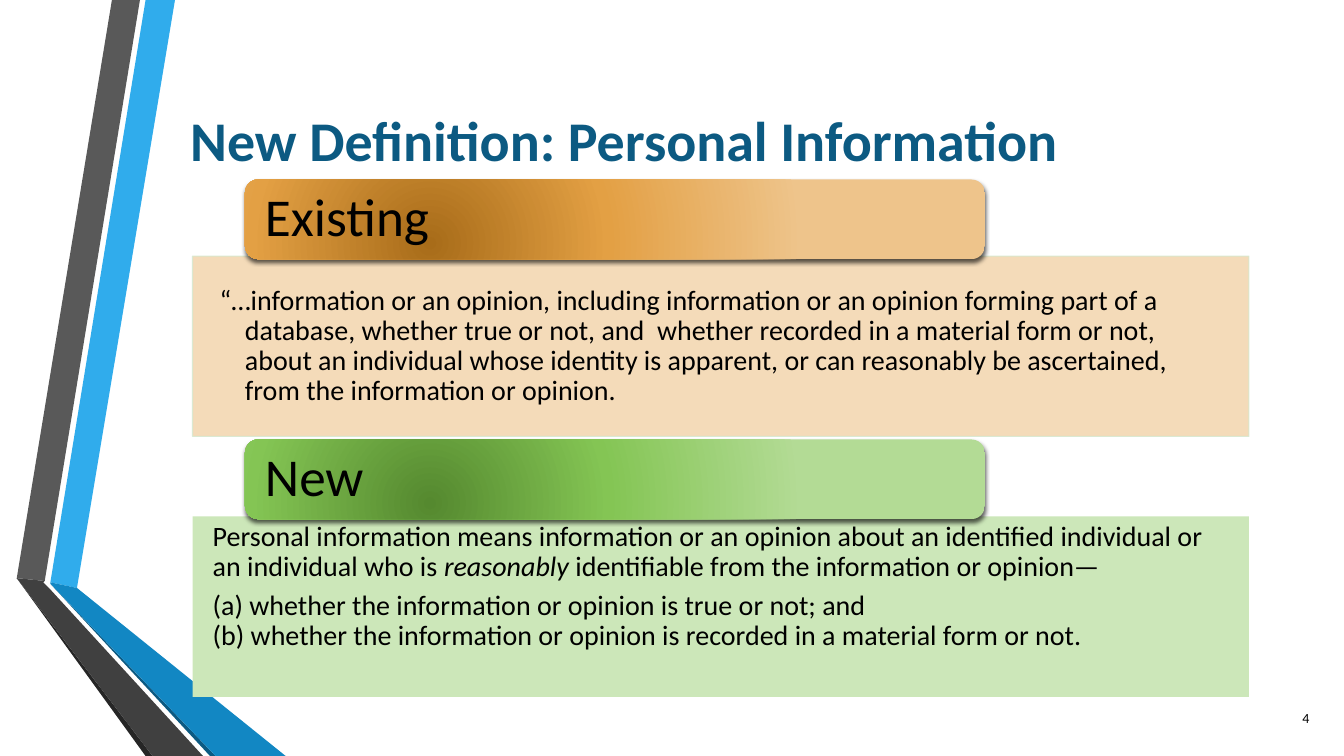
import lxml.etree
import pptx
import pptx.dml.color
import pptx.enum.shapes
import pptx.enum.text
import pptx.oxml
import pptx.oxml.ns
import pptx.util

Pt = pptx.util.Pt
SHAPE = pptx.enum.shapes.MSO_SHAPE
ALIGN = pptx.enum.text.PP_ALIGN
ANCHOR = pptx.enum.text.MSO_ANCHOR
qn = pptx.oxml.ns.qn

FONT = "Calibri"
BLACK = "000000"
TITLE_BLUE = "0C5A82"
BODY_INSETS = {"Existing": (19.4, 10), "New": (14.4, 4.3)}

RIBBONS = [
    ("30ACEC", [(36, 416.2), (55.4, 419.8), (124.6, 0), (104.4, 0)]),
    ("595959", [(100, 0), (80, 0), (11.5, 412.6), (31.7, 415.4)]),
    ("262626", [(11.5, 412.6), (104.4, 540), (108.7, 540)]),
    (TITLE_BLUE, [(36, 416.9), (149.8, 540), (154, 540)]),
    ("1287C3", [(36, 416.9), (154, 540), (203.8, 540), (55.4, 419.8), (36, 416.2)]),
    ("404040", [(145.4, 540), (34.6, 419.8), (31, 416.2), (31.7, 415.4), (11.5, 412.6), (108.7, 540)]),
]


def color(value):
    """Turn a hex string into a colour."""
    return pptx.dml.color.RGBColor.from_string(value)


def add_child(parent, tag, **attributes):
    """Append a DrawingML element and return it."""
    values = {name: str(value) for name, value in attributes.items()}
    return lxml.etree.SubElement(parent, qn(tag), values)


def set_alpha(fill, percent):
    """Make a solid fill partly transparent."""
    for rgb in fill._xPr.iter(qn("a:srgbClr")):
        add_child(rgb, "a:alpha", val=percent * 1000)


def write(p, text, size=20, fill=BLACK, bold=False, italic=False):
    """Add a formatted run to a paragraph."""
    r = p.add_run()
    r.text = text
    r.font.name = FONT
    r.font.size = Pt(size)
    r.font.bold = bold
    r.font.italic = italic
    r.font.color.rgb = color(fill)


def set_paragraph(p, align=ALIGN.LEFT, line=1.0, after=0, hanging=0):
    """Set alignment, spacing and hanging indent of a paragraph."""
    p.alignment = align
    p.line_spacing = line
    p.space_before = Pt(0)
    p.space_after = Pt(after)
    pPr = p._p.get_or_add_pPr()
    pPr.set("marL", str(Pt(hanging)))
    pPr.set("indent", str(-Pt(hanging)))
    return p


def set_frame(s, anchor, inset_x=7.2, inset_y=3.6):
    """Prepare the text frame of a shape."""
    tf = s.text_frame
    tf.word_wrap = True
    tf.vertical_anchor = anchor
    tf.margin_left = tf.margin_right = Pt(inset_x)
    tf.margin_top = tf.margin_bottom = Pt(inset_y)
    return tf


def add_ribbon(slide, fill, points):
    """Draw one filled piece of the folded ribbons."""
    builder = slide.shapes.build_freeform(*points[0], scale=Pt(1))
    builder.add_line_segments(points[1:], close=True)
    s = builder.convert_to_shape()
    s.shadow.inherit = False
    s.fill.solid()
    s.fill.fore_color.rgb = color(fill)
    s.line.fill.background()


def add_label(slide, box, text, align, **style):
    """Add a one-paragraph text box."""
    s = slide.shapes.add_textbox(*map(Pt, box))
    tf = set_frame(s, ANCHOR.MIDDLE)
    write(set_paragraph(tf.paragraphs[0], align), text, **style)


def add_panel(slide, top, fill, name, anchor):
    """Add a body rectangle and return it."""
    s = slide.shapes.add_shape(SHAPE.RECTANGLE, Pt(137.5), Pt(top), Pt(754.6), Pt(128.9))
    s.shadow.inherit = False
    s.fill.solid()
    s.fill.fore_color.rgb = color(fill)
    s.line.fill.background()
    set_frame(s, anchor, *BODY_INSETS[name])
    return s


def add_header(slide, top, text, stops):
    """Add a rounded header with a radial gradient and a soft shadow."""
    s = slide.shapes.add_shape(SHAPE.ROUNDED_RECTANGLE, Pt(175), Pt(top), Pt(528.5), Pt(56.9))
    s.line.fill.background()
    s.fill.background()
    spPr = s._element.spPr
    grad = pptx.oxml.parse_xml('<a:gradFill %s rotWithShape="1"/>' % pptx.oxml.ns.nsdecls("a"))
    stop_list = add_child(grad, "a:gsLst")
    for position, value in zip((0, 48, 100), stops):
        stop = add_child(stop_list, "a:gs", pos=position * 1000)
        add_child(stop, "a:srgbClr", val=value)
    circle = add_child(grad, "a:path", path="circle")
    add_child(circle, "a:fillToRect", l=25000, t=80000, r=75000, b=20000)
    spPr.replace(spPr.find(qn("a:noFill")), grad)

    s.shadow.inherit = False
    shadow = add_child(spPr.find(qn("a:effectLst")), "a:outerShdw", blurRad=Pt(3),
                       dist=Pt(2), dir=5400000, algn="ctr", rotWithShape=0)
    add_child(add_child(shadow, "a:srgbClr", val=BLACK), "a:alpha", val=64000)

    tf = set_frame(s, ANCHOR.MIDDLE, 11.5, 5.8)
    write(set_paragraph(tf.paragraphs[0], line=0.9), text, size=38)


def add_existing(slide):
    """Add the existing definition."""
    s = add_panel(slide, 182.9, "F3D8B2", "Existing", ANCHOR.MIDDLE)
    set_alpha(s.fill, 90)
    s.line.color.rgb = color("D8E9D0")
    s.line.width = Pt(0.75)
    set_alpha(s.line.fill, 90)
    p = set_paragraph(s.text_frame.paragraphs[0], line=0.9, after=3, hanging=18)
    write(p, "“…information or an opinion, including information or an opinion forming part of a "
             "database, whether true or not, and  whether recorded in a material form or not, "
             "about an individual whose identity is apparent, or can reasonably be ascertained, "
             "from the information or opinion.")
    add_header(slide, 128.2, "Existing", ("A86C19", "E3A044", "EEC48B"))


def add_new(slide):
    """Add the new definition."""
    tf = add_panel(slide, 368.9, "CCE7B9", "New", ANCHOR.TOP).text_frame
    p = set_paragraph(tf.paragraphs[0], line=0.9, after=3)
    write(p, "Personal information means information or an opinion about an identified "
             "individual or an individual who is ")
    write(p, "reasonably ", italic=True)
    write(p, "identifiable from the information or opinion—")
    p = set_paragraph(tf.add_paragraph())
    write(p, "(a) whether the information or opinion is true or not; and")
    p = set_paragraph(tf.add_paragraph(), line=0.9, after=3, hanging=27)
    write(p, "(b) whether the information or opinion is recorded in a material form or not.")
    add_header(slide, 313.9, "New", ("55892F", "84C554", "B3DB95"))


def main():
    """Build and save the slide."""
    prs = pptx.Presentation()
    prs.slide_width, prs.slide_height = Pt(960), Pt(540)
    slide = prs.slides.add_slide(prs.slide_layouts[6])
    for fill, points in RIBBONS:
        add_ribbon(slide, fill, points)
    add_label(slide, (108.7, 64.8, 673.9, 69.1), "New Definition: Personal Information",
              ALIGN.CENTER, size=40, fill=TITLE_BLUE, bold=True)
    add_existing(slide)
    add_new(slide)
    add_label(slide, (899.3, 498.2, 43.2, 28.8), "4", ALIGN.RIGHT, size=10)
    prs.save("out.pptx")


if __name__ == "__main__":
    main()
